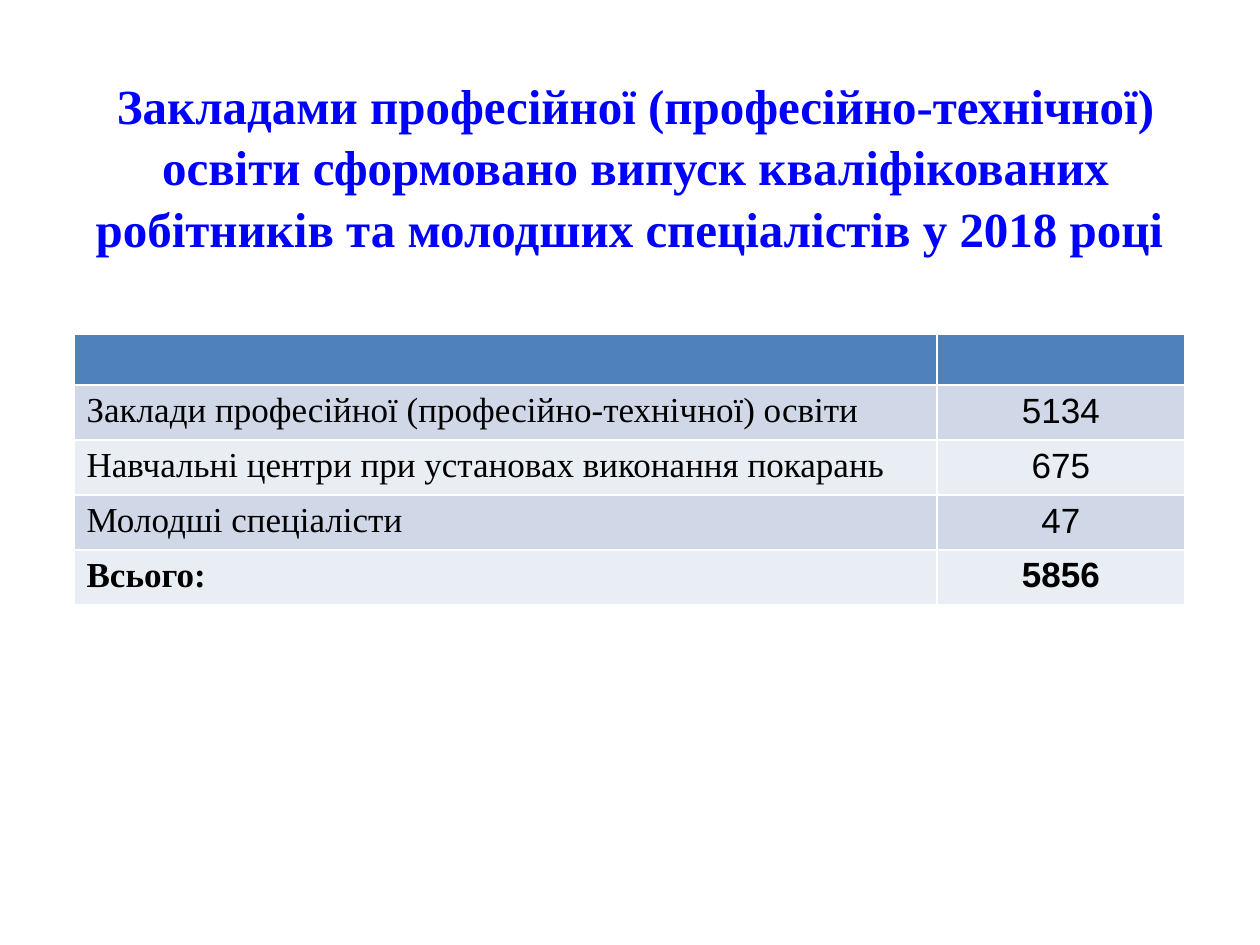
"""Build the slide on the 2018 graduates of vocational schools."""
import pptx
import pptx.util
import pptx.dml.color
import pptx.enum.text

PX = 914400 // 126
BLUE = pptx.dml.color.RGBColor(0x00, 0x00, 0xFF)
BLACK = pptx.dml.color.RGBColor(0x00, 0x00, 0x00)
HEADER = pptx.dml.color.RGBColor(0x4F, 0x81, 0xBD)
BANDS = [pptx.dml.color.RGBColor(0xE9, 0xED, 0xF4), pptx.dml.color.RGBColor(0xD0, 0xD8, 0xE8)]
ALIGN = pptx.enum.text.PP_ALIGN
TITLE = ("Закладами професійної (професійно-технічної) освіти сформовано випуск "
         "кваліфікованих робітників та молодших спеціалістів у 2018 році ")
ROWS = [
    ("", ""),
    ("Заклади професійної (професійно-технічної) освіти", "5134"),
    ("Навчальні центри при установах виконання покарань", "675"),
    ("Молодші спеціалісти", "47"),
    ("Всього:", "5856"),
]
COLUMNS = [(863, "Times New Roman", ALIGN.LEFT), (248, "Arial", ALIGN.CENTER)]


def write(p, text, align, color, **fmt):
    p.alignment = align
    r = p.add_run()
    r.text = text
    r.font.color.rgb = color
    for name, value in fmt.items():
        setattr(r.font, name, value)


prs = pptx.Presentation()
prs.slide_width = 1260 * PX
prs.slide_height = 945 * PX
s = prs.slides.add_slide(prs.slide_layouts[5])

sp = s.shapes.title
for name, value in {"left": 35, "top": 66, "width": 1201, "height": 190}.items():
    setattr(sp, name, value * PX)
tf = sp.text_frame
tf.word_wrap = True
tf.auto_size = pptx.enum.text.MSO_AUTO_SIZE.NONE
tf.vertical_anchor = pptx.enum.text.MSO_ANCHOR.TOP
p = tf.paragraphs[0]
p.line_spacing = 1.05
write(p, TITLE, ALIGN.CENTER, BLUE, name="Times New Roman", size=pptx.util.Pt(28), bold=True)

table = s.shapes.add_table(len(ROWS), len(COLUMNS), 74 * PX, 334 * PX, 1111 * PX, 270 * PX).table
for i, row in enumerate(ROWS):
    table.rows[i].height = (55 if i else 50) * PX
    for j, (width, font, align) in enumerate(COLUMNS):
        table.columns[j].width = width * PX
        cell = table.cell(i, j)
        cell.fill.solid()
        cell.fill.fore_color.rgb = BANDS[i % 2] if i else HEADER
        if row[j]:
            write(cell.text_frame.paragraphs[0], row[j], align, BLACK, name=font,
                  size=pptx.util.Pt(20), bold=i == len(ROWS) - 1)

prs.save("out.pptx")
